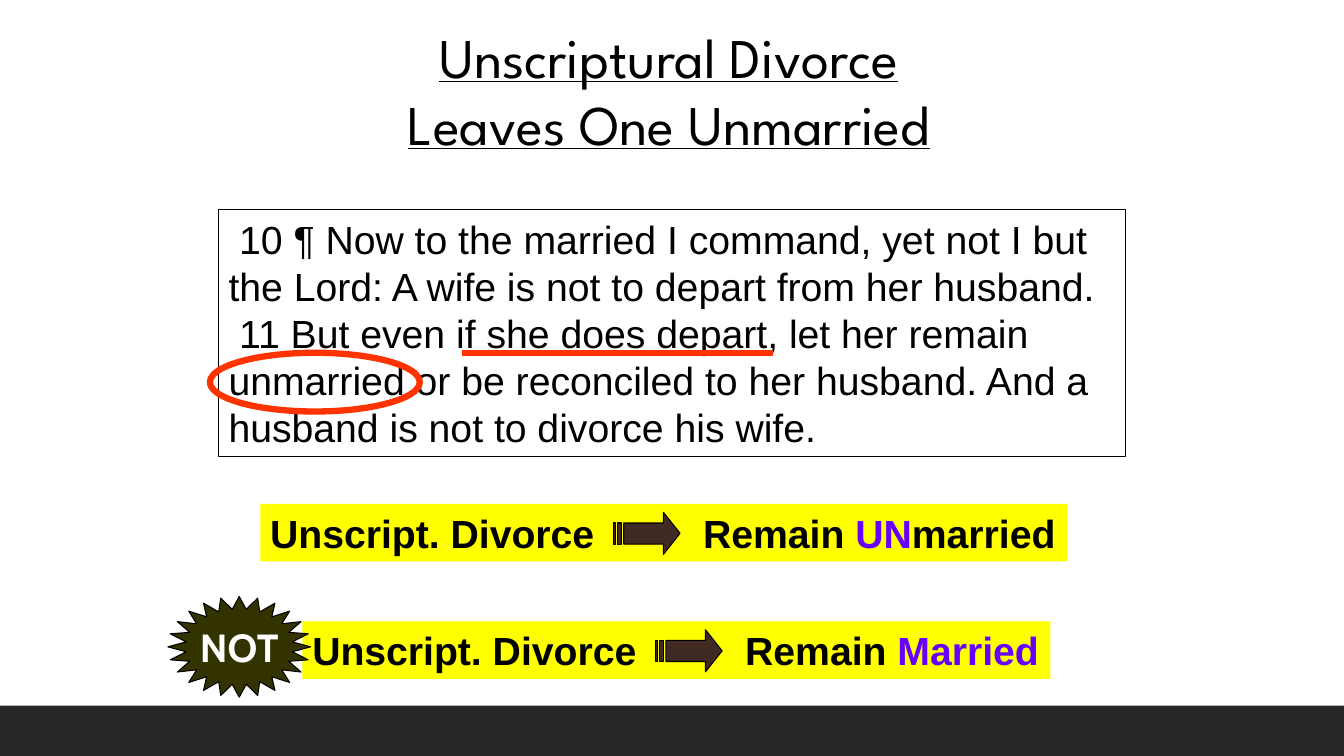
from dataclasses import dataclass
from typing import Optional

from lxml.etree import SubElement
from pptx import Presentation
from pptx.dml.color import RGBColor as RGB
from pptx.enum.shapes import MSO_CONNECTOR as Link, MSO_SHAPE as Kind
from pptx.enum.text import MSO_ANCHOR as Anchor, MSO_AUTO_SIZE as Fit, PP_ALIGN as Align
from pptx.oxml.ns import qn
from pptx.util import Cm, Pt


@dataclass(frozen=True)
class Theme:
    black: RGB = RGB(0, 0, 0)
    white: RGB = RGB(255, 255, 255)
    floor: RGB = RGB(0x26, 0x26, 0x26)
    red: RGB = RGB(0xFF, 0x33, 0x00)
    yellow: RGB = RGB(0xFF, 0xFF, 0x00)
    violet: RGB = RGB(0x66, 0x00, 0xFF)
    brown: RGB = RGB(0x41, 0x29, 0x24)
    olive: RGB = RGB(0x33, 0x33, 0x00)
    head: str = "League Spartan"
    body: str = "Arial"
    badge: str = "Cabin"
    large: float = 40
    text: float = 28
    thin: float = 0.75
    thick: float = 4.5


@dataclass(frozen=True)
class Box:
    x: float
    y: float
    w: float
    h: float

    def spans(self) -> tuple:
        return Cm(self.x), Cm(self.y), Cm(self.w), Cm(self.h)


@dataclass(frozen=True)
class Piece:
    text: str
    color: RGB


@dataclass(frozen=True)
class Claim:
    box: Box
    words: tuple[Piece, ...]


THEME = Theme()
TITLE = ("Unscriptural Divorce", "Leaves One Unmarried")
VERSES = (
    "10 ¶ Now to the married I command, yet not I but the Lord: "
    "A wife is not to depart from her husband.",
    "11 But even if she does depart, let her remain unmarried or be reconciled "
    "to her husband. And a husband is not to divorce his wife.",
)
LEAD = Piece("Unscript. Divorce\tRemain ", THEME.black)
CLAIMS = (
    Claim(Box(6.56, 12.7, 20.34, 1.45),
          (LEAD, Piece("UN", THEME.violet), Piece("married", THEME.black))),
    Claim(Box(7.62, 15.66, 18.85, 1.45), (LEAD, Piece("Married", THEME.violet))),
)
TAB = 10.91
ARROW = (
    ((1.27, 0), (1.27, 0.27), (0.27, 0.27), (0.27, 0.8),
     (1.27, 0.8), (1.27, 1.06), (1.69, 0.53)),
    ((0.11, 0.27), (0.11, 0.8), (0.21, 0.8), (0.21, 0.27)),
    ((0, 0.27), (0, 0.8), (0.05, 0.8), (0.05, 0.27)),
)


def style(shape, fill: Optional[RGB], line: Optional[RGB], width: float = THEME.thin) -> None:
    shape.shadow.inherit = False
    if fill is None:
        shape.fill.background()
    else:
        shape.fill.solid()
        shape.fill.fore_color.rgb = fill
    if line is None:
        shape.line.fill.background()
    else:
        shape.line.color.rgb = line
        shape.line.width = Pt(width)


def draw(slide, kind: Kind, box: Box, fill: Optional[RGB],
         line: Optional[RGB], width: float = THEME.thin):
    shape = slide.shapes.add_shape(kind, *box.spans())
    style(shape, fill, line, width)
    return shape


def setup(shape, anchor: Anchor = Anchor.TOP, wrap: bool = True):
    frame = shape.text_frame
    frame.auto_size = Fit.NONE
    frame.word_wrap = wrap
    frame.vertical_anchor = anchor
    return frame


def write(para, piece: Piece, face: str = THEME.body, size: float = THEME.text,
          bold: bool = False, under: bool = False) -> None:
    run = para.add_run()
    run.text = piece.text
    font = run.font
    font.name, font.size, font.bold, font.underline = face, Pt(size), bold, under
    font.color.rgb = piece.color


def lines(frame, count: int, align: Align) -> list:
    paras = [frame.paragraphs[0]] + [frame.add_paragraph() for _ in range(count - 1)]
    for para in paras:
        para.alignment = align
    return paras


def add_title(slide) -> None:
    title = slide.shapes.title
    title.left, title.top, title.width, title.height = Box(8.69, 0.43, 16.33, 3.68).spans()
    frame = setup(title, wrap=False)
    for para, text in zip(lines(frame, len(TITLE), Align.CENTER), TITLE):
        write(para, Piece(text, THEME.black), THEME.head, THEME.large, under=True)


def add_verses(slide) -> None:
    box = draw(slide, Kind.RECTANGLE, Box(5.51, 5.29, 22.86, 6.22), None, THEME.black)
    for para, text in zip(lines(setup(box), len(VERSES), Align.LEFT), VERSES):
        props = para._p.get_or_add_pPr()
        props.set("marL", "0")
        props.set("indent", str(Cm(0.27)))
        write(para, Piece(text, THEME.black))


def add_marks(slide) -> None:
    """Underline and circle the key words of the verses."""
    rule = slide.shapes.add_connector(Link.STRAIGHT, Cm(11.64), Cm(8.89), Cm(19.47), Cm(8.89))
    rule.line.color.rgb = THEME.red
    rule.line.width = Pt(THEME.thick)
    SubElement(rule._element.spPr, qn("a:effectLst"))
    draw(slide, Kind.OVAL, Box(5.29, 8.89, 5.29, 1.48), None, THEME.red, THEME.thick)


def add_arrow(slide, x: float, y: float) -> None:
    pen = None
    for ring in ARROW:
        (left, top), *rest = [(Cm(x + dx), Cm(y + dy)) for dx, dy in ring]
        if pen is None:
            pen = slide.shapes.build_freeform(left, top)
        else:
            pen.move_to(left, top)
        pen.add_line_segments(rest, close=True)
    style(pen.convert_to_shape(), THEME.brown, THEME.black)


def add_claim(slide, claim: Claim) -> None:
    box = draw(slide, Kind.RECTANGLE, claim.box, THEME.yellow, None)
    frame = setup(box)
    frame.margin_right = 0
    para = lines(frame, 1, Align.LEFT)[0]
    tabs = SubElement(para._p.get_or_add_pPr(), qn("a:tabLst"))
    SubElement(tabs, qn("a:tab"), pos=str(Cm(TAB)), algn="l")
    for piece in claim.words:
        write(para, piece, bold=True)
    add_arrow(slide, claim.box.x + 8.89, claim.box.y + 0.21)


def add_badge(slide) -> None:
    star = draw(slide, Kind.STAR_24_POINT, Box(4.23, 15.03, 3.6, 2.54),
                THEME.olive, THEME.black)
    star.adjustments[0] = 0.375
    frame = setup(star, Anchor.MIDDLE, wrap=False)
    write(lines(frame, 1, Align.CENTER)[0], Piece("NOT", THEME.white), THEME.badge, bold=True)


def main() -> None:
    deck = Presentation()
    deck.slide_width, deck.slide_height = Cm(33.87), Cm(19.05)
    slide = deck.slides.add_slide(deck.slide_layouts[5])
    draw(slide, Kind.RECTANGLE, Box(0, 17.78, 33.87, 1.27), THEME.floor, None)
    add_verses(slide)
    add_title(slide)
    add_marks(slide)
    for claim in CLAIMS:
        add_claim(slide, claim)
    add_badge(slide)
    deck.save("out.pptx")


if __name__ == "__main__":
    main()
